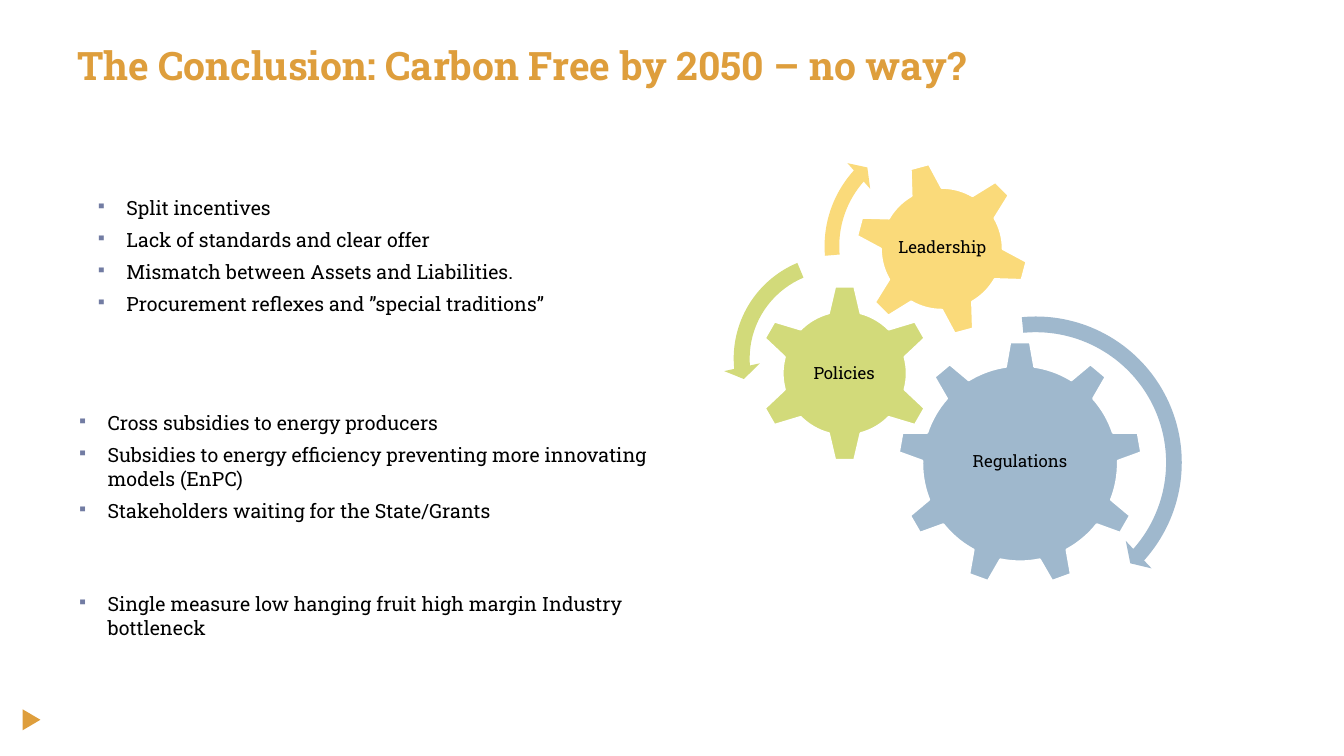
from dataclasses import dataclass

from lxml.etree import SubElement
from pptx import Presentation
from pptx.dml.color import RGBColor
from pptx.enum.shapes import MSO_SHAPE
from pptx.enum.text import MSO_ANCHOR, MSO_AUTO_SIZE, PP_ALIGN
from pptx.oxml.ns import qn
from pptx.util import Emu, Pt

EMU_PER_PX = 9525


@dataclass(frozen=True)
class Theme:
    font: str = "Roboto Slab"
    accent: str = "DE9E3C"
    text: str = "000000"
    bullet: str = "727CA3"
    outline: str = "FFFFFF"
    blue: str = "9FB8CD"
    green: str = "D2DA7A"
    yellow: str = "FADA7A"
    title_size: int = 28
    body_size: int = 14
    label_size: int = 12


THEME = Theme()


@dataclass(frozen=True)
class Box:
    left: int
    top: int
    width: int
    height: int


@dataclass(frozen=True)
class Gear:
    label: str
    kind: MSO_SHAPE
    box: Box
    label_box: Box
    color: str
    rotation: int = 0


@dataclass(frozen=True)
class Arrow:
    kind: MSO_SHAPE
    box: Box
    color: str
    adjustments: tuple[float, ...]


@dataclass(frozen=True)
class BulletList:
    box: Box
    items: tuple[str, ...]


GEARS = (
    Gear("Regulations", MSO_SHAPE.GEAR_9, Box(855, 325, 233, 233),
         Box(902, 380, 139, 120), THEME.blue),
    Gear("Policies", MSO_SHAPE.GEAR_6, Box(720, 271, 169, 169),
         Box(762, 314, 84, 84), THEME.green),
    Gear("Leadership", MSO_SHAPE.GEAR_6, Box(814, 154, 166, 166),
         Box(851, 190, 93, 93), THEME.yellow, 345),
)

ARROWS = (
    Arrow(MSO_SHAPE.CIRCULAR_ARROW, Box(837, 291, 299, 299), THEME.blue,
          (0.05, 2.99, 25.12, 158.7, 0.06)),
    Arrow(MSO_SHAPE.LEFT_CIRCULAR_ARROW, Box(689, 233, 217, 217), THEME.green,
          (0.07, 4.3, 104.89, 148.38, 0.08)),
    Arrow(MSO_SHAPE.CIRCULAR_ARROW, Box(776, 118, 233, 233), THEME.yellow,
          (0.06, 3.94, 133.14, 105.08, 0.07)),
)

LISTS = (
    BulletList(Box(64, 387, 576, 125), (
        "Cross subsidies to energy producers",
        "Subsidies to energy efficiency preventing more innovating models (EnPC)",
        "Stakeholders waiting for the State/Grants",
    )),
    BulletList(Box(64, 559, 576, 67), (
        "Single measure low hanging fruit high margin Industry bottleneck",
    )),
    BulletList(Box(82, 182, 576, 125), (
        "Split incentives",
        "Lack of standards and clear offer",
        "Mismatch between Assets and Liabilities.",
        "Procurement reflexes and ”special traditions”",
    )),
)


def px(value: int) -> Emu:
    return Emu(value * EMU_PER_PX)


def bounds(box: Box) -> tuple[Emu, Emu, Emu, Emu]:
    return px(box.left), px(box.top), px(box.width), px(box.height)


def format_text(p, size: int, color: str, bold: bool = False) -> None:
    for r in p.runs:
        r.font.name = THEME.font
        r.font.size = Pt(size)
        r.font.bold = bold
        r.font.color.rgb = RGBColor.from_string(color)


def add_filled(slide, kind: MSO_SHAPE, box: Box, color: str, rotation: int = 0):
    sp = slide.shapes.add_shape(kind, *bounds(box))
    sp.shadow.inherit = False
    sp.fill.solid()
    sp.fill.fore_color.rgb = RGBColor.from_string(color)
    sp.line.fill.background()
    sp.rotation = rotation
    return sp


def add_title(slide, text: str, box: Box) -> None:
    sp = slide.shapes.title
    sp.left, sp.top, sp.width, sp.height = bounds(box)
    tf = sp.text_frame
    tf.text = text
    tf.auto_size = MSO_AUTO_SIZE.NONE
    tf.vertical_anchor = MSO_ANCHOR.BOTTOM
    tf.paragraphs[0].alignment = PP_ALIGN.LEFT
    format_text(tf.paragraphs[0], THEME.title_size, THEME.accent, bold=True)


def add_gear(slide, gear: Gear) -> None:
    sp = add_filled(slide, gear.kind, gear.box, gear.color, gear.rotation)
    sp.line.color.rgb = RGBColor.from_string(THEME.outline)
    sp.line.width = Pt(1.5)
    tf = slide.shapes.add_textbox(*bounds(gear.label_box)).text_frame
    tf.word_wrap = True
    tf.vertical_anchor = MSO_ANCHOR.MIDDLE
    tf.margin_left = tf.margin_right = tf.margin_top = tf.margin_bottom = px(2)
    p = tf.paragraphs[0]
    p.text = gear.label
    p.alignment = PP_ALIGN.CENTER
    p.line_spacing = 0.9
    format_text(p, THEME.label_size, THEME.text)


def add_arrow(slide, arrow: Arrow) -> None:
    sp = add_filled(slide, arrow.kind, arrow.box, arrow.color)
    for i, value in enumerate(arrow.adjustments):
        sp.adjustments[i] = value


def add_bullet(p) -> None:
    pPr = p._p.get_or_add_pPr()
    pPr.set("marL", str(px(29)))
    pPr.set("indent", str(-px(29)))
    color = SubElement(pPr, qn("a:buClr"))
    SubElement(color, qn("a:srgbClr"), val=THEME.bullet)
    SubElement(pPr, qn("a:buSzPct"), val="76000")
    SubElement(pPr, qn("a:buChar"), char="▪")


def add_bullet_list(slide, bullets: BulletList) -> None:
    tf = slide.shapes.add_textbox(*bounds(bullets.box)).text_frame
    tf.word_wrap = True
    for i, item in enumerate(bullets.items):
        p = tf.add_paragraph() if i else tf.paragraphs[0]
        p.text = item
        add_bullet(p)
        if i:
            p.space_before = Pt(6)
        format_text(p, THEME.body_size, THEME.text)


def main() -> None:
    prs = Presentation()
    prs.slide_width, prs.slide_height = px(1280), px(720)
    slide = prs.slides.add_slide(prs.slide_layouts[5])
    add_filled(slide, MSO_SHAPE.ISOSCELES_TRIANGLE, Box(20, 677, 20, 17), THEME.accent, 90)
    add_title(slide, "The Conclusion: Carbon Free by 2050 – no way?", Box(64, -15, 1152, 104))
    for gear in GEARS:
        add_gear(slide, gear)
    for arrow in ARROWS:
        add_arrow(slide, arrow)
    for bullets in LISTS:
        add_bullet_list(slide, bullets)
    prs.save("out.pptx")


if __name__ == "__main__":
    main()
